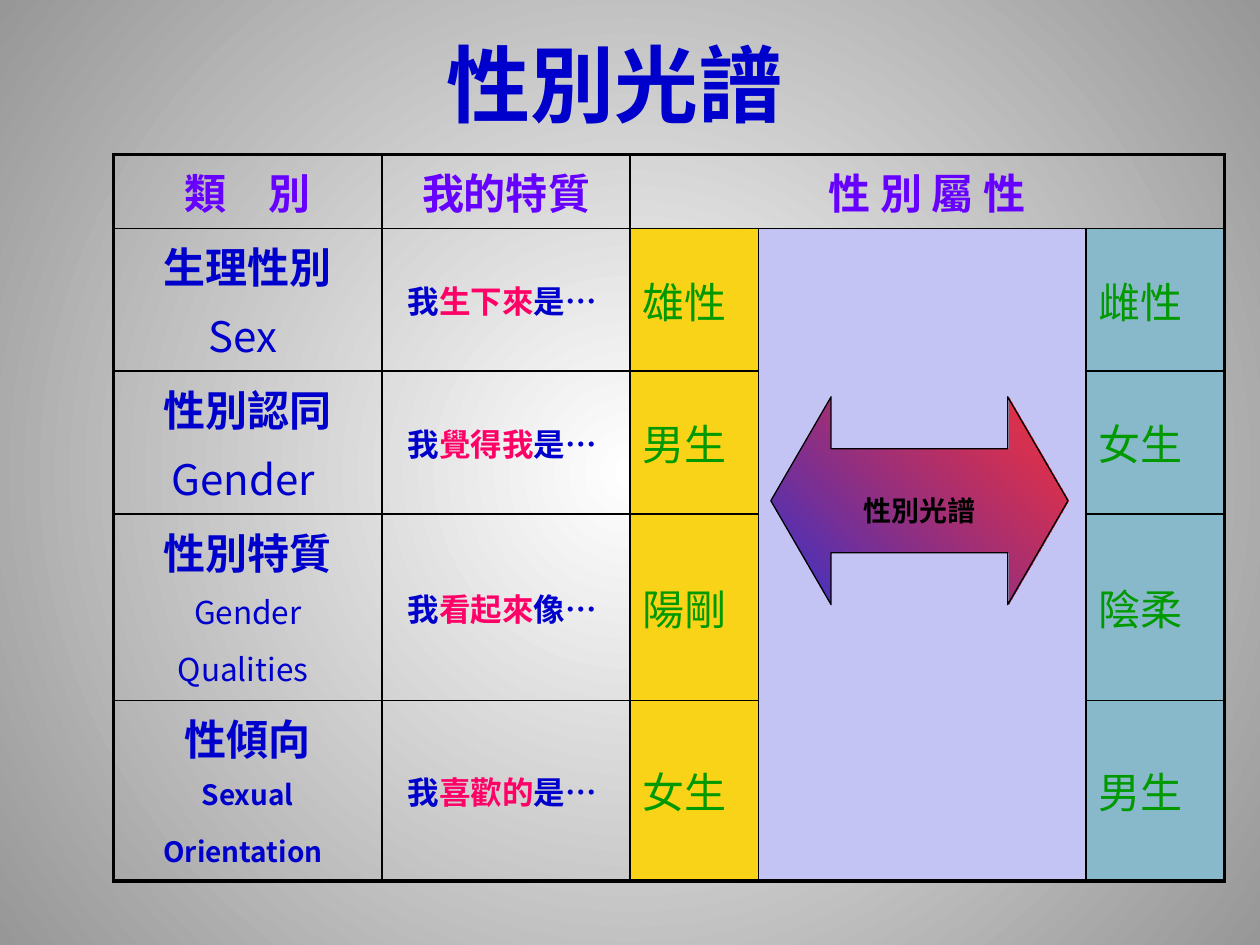
from dataclasses import dataclass

from lxml.etree import SubElement
from pptx import Presentation
from pptx.dml.color import RGBColor
from pptx.enum.shapes import MSO_SHAPE
from pptx.enum.text import MSO_ANCHOR, MSO_AUTO_SIZE, PP_ALIGN
from pptx.oxml.ns import qn
from pptx.util import Cm, Pt


@dataclass(frozen=True)
class Theme:
    title_font: str = "Karla"
    body_font: str = "Noto Sans CJK SC"
    blue: str = "0000CC"
    violet: str = "6600FF"
    pink: str = "FF0066"
    green: str = "009900"
    black: str = "000000"
    male_fill: str = "F9D317"
    spectrum_fill: str = "C4C4F4"
    female_fill: str = "88B9CA"
    backdrop: tuple = (("FFFFFF", 100), ("979797", 100))
    arrow: tuple = (("3333CC", 100), ("FF0000", 74))
    title_size: float = 48
    cell_size: float = 24
    phrase_size: float = 18
    label_size: float = 16
    outer_line: float = 2.25
    inner_line: float = 1


THEME = Theme()


@dataclass(frozen=True)
class Span:
    text: str
    color: str = THEME.blue
    size: float = THEME.cell_size
    bold: bool = True
    font: str = THEME.body_font


@dataclass(frozen=True)
class Category:
    name: str
    english: tuple[Span, ...]
    phrase: tuple[str, str, str]
    male: str
    female: str
    height: float


CATEGORIES = [
    Category("生理性別", (Span("Sex ", bold=False),),
             ("我", "生下來", "是… "), "雄性", "雌性", 2.54),
    Category("性別認同", (Span("Gender ", bold=False),),
             ("我", "覺得我", "是… "), "男生", "女生", 2.54),
    Category("性別特質",
             (Span("Gender Qualities", size=THEME.phrase_size, bold=False),
              Span(" ", bold=False)),
             ("我", "看起來", "像… "), "陽剛", "陰柔", 3.25),
    Category("性傾向",
             (Span("Sexual Orientation", size=THEME.label_size), Span(" ")),
             ("我", "喜歡的", "是… "), "女生", "男生", 3.15),
]
HEADERS = ("類　別", "我的特質", "性 別 屬 性")
COLUMN_WIDTHS = (5.41, 5, 2.59, 6.6, 2.79)
HEADER_HEIGHT = 1.3
MALE, SPECTRUM, FEMALE = 2, 3, 4


def write(frame, paragraphs: list[tuple[Span, ...]], align=PP_ALIGN.CENTER) -> None:
    """Fill a text frame; later paragraphs get a fifth of their size as space before."""
    for index, spans in enumerate(paragraphs):
        paragraph = frame.add_paragraph() if index else frame.paragraphs[0]
        paragraph.alignment = align
        if index:
            paragraph.space_before = Pt(0.2 * spans[0].size)
        for span in spans:
            run = paragraph.add_run()
            run.text = span.text
            font_format = {"name": span.font, "size": Pt(span.size), "bold": span.bold}
            for attribute, value in font_format.items():
                setattr(run.font, attribute, value)
            run.font.color.rgb = RGBColor.from_string(span.color)
            latin = run.font._element.find(qn("a:latin"))
            east_asian = latin.makeelement(qn("a:ea"), {"typeface": THEME.body_font})
            latin.addnext(east_asian)


def paint_gradient(fill, owner, stops: tuple, angle: float | None = None) -> None:
    """Paint a linear gradient, or one from the centre when no angle is given."""
    fill.gradient()
    gradient = owner.xpath(".//a:gradFill")[0]
    for child in list(gradient):
        gradient.remove(child)
    stop_list = SubElement(gradient, qn("a:gsLst"))
    for position, (color, opacity) in zip((0, 100000), stops):
        stop = SubElement(stop_list, qn("a:gs"), pos=str(position))
        rgb = SubElement(stop, qn("a:srgbClr"), val=color)
        if opacity < 100:
            SubElement(rgb, qn("a:alpha"), val=str(opacity * 1000))
    if angle is None:
        radial = SubElement(gradient, qn("a:path"), path="circle")
        SubElement(radial, qn("a:fillToRect"), dict.fromkeys("ltrb", "50000"))
    else:
        SubElement(gradient, qn("a:lin"), ang=str(int(angle * 60000)), scaled="0")


def draw_borders(cell, outer_sides: dict[str, bool]) -> None:
    properties = cell._tc.get_or_add_tcPr()
    for side, is_outer in outer_sides.items():
        width = THEME.outer_line if is_outer else THEME.inner_line
        line = SubElement(properties, qn(f"a:ln{side}"), w=str(Pt(width)))
        solid = SubElement(line, qn("a:solidFill"))
        SubElement(solid, qn("a:srgbClr"), val=THEME.black)


def style_cells(table) -> None:
    last_row, last_column = len(table.rows) - 1, len(table.columns) - 1
    fills = {MALE: THEME.male_fill, SPECTRUM: THEME.spectrum_fill,
             FEMALE: THEME.female_fill}
    for row in range(last_row + 1):
        for column in range(last_column + 1):
            cell = table.cell(row, column)
            if cell.is_spanned:
                continue
            draw_borders(cell, {
                "L": column == 0,
                "R": column + cell.span_width - 1 == last_column,
                "T": row == 0,
                "B": row + cell.span_height - 1 == last_row,
            })
            if row and column in fills:
                cell.fill.solid()
                cell.fill.fore_color.rgb = RGBColor.from_string(fills[column])
            else:
                cell.fill.background()
            if row and column:
                cell.vertical_anchor = MSO_ANCHOR.MIDDLE


def add_spectrum_table(slide) -> None:
    heights = [HEADER_HEIGHT] + [category.height for category in CATEGORIES]
    table = slide.shapes.add_table(
        len(heights), len(COLUMN_WIDTHS), Cm(2.29), Cm(3.12),
        Cm(sum(COLUMN_WIDTHS)), Cm(sum(heights))).table
    table.first_row = table.horz_banding = False
    # "No Style, No Grid"
    table._tbl.tblPr.find(qn("a:tableStyleId")).text = (
        "{2D5ABB26-0587-4C30-8999-92F81FD0307C}")
    for column, width in zip(table.columns, COLUMN_WIDTHS):
        column.width = Cm(width)
    for row, height in zip(table.rows, heights):
        row.height = Cm(height)
    table.cell(0, MALE).merge(table.cell(0, FEMALE))
    table.cell(1, SPECTRUM).merge(table.cell(len(CATEGORIES), SPECTRUM))
    style_cells(table)

    for column, header in enumerate(HEADERS):
        write(table.cell(0, column).text_frame, [(Span(header, THEME.violet),)])
    phrase_colors = (THEME.blue, THEME.pink, THEME.blue)
    for row, category in enumerate(CATEGORIES, start=1):
        write(table.cell(row, 0).text_frame, [(Span(category.name),), category.english])
        phrase = tuple(Span(part, color, THEME.phrase_size)
                       for part, color in zip(category.phrase, phrase_colors))
        write(table.cell(row, 1).text_frame, [phrase])
        for column, trait in ((MALE, category.male), (FEMALE, category.female)):
            write(table.cell(row, column).text_frame,
                  [(Span(trait, THEME.green, bold=False),)], PP_ALIGN.LEFT)


def add_spectrum_arrow(slide) -> None:
    arrow = slide.shapes.add_shape(
        MSO_SHAPE.LEFT_RIGHT_ARROW, Cm(15.54), Cm(8), Cm(5.99), Cm(4.19))
    arrow.adjustments[0], arrow.adjustments[1] = 0.5, 0.29
    arrow.shadow.inherit = False
    paint_gradient(arrow.fill, arrow._element, THEME.arrow, angle=315)
    arrow.line.color.rgb = RGBColor.from_string(THEME.black)
    arrow.line.width = Pt(0.75)
    arrow.text_frame.vertical_anchor = MSO_ANCHOR.MIDDLE
    write(arrow.text_frame, [(Span("性別光譜", THEME.black, THEME.label_size),)])
    arrow.text_frame.paragraphs[0].line_spacing = 1.6


def add_title(slide) -> None:
    title = slide.shapes.title
    placement = {"left": Cm(4.29), "top": Cm(0.71), "width": Cm(16.21), "height": Cm(1.93)}
    for attribute, value in placement.items():
        setattr(title, attribute, value)
    title.text_frame.auto_size = MSO_AUTO_SIZE.NONE
    title.text_frame.vertical_anchor = MSO_ANCHOR.MIDDLE
    write(title.text_frame,
          [(Span("性別光譜", size=THEME.title_size, font=THEME.title_font),)])


def main() -> None:
    presentation = Presentation()
    presentation.slide_width, presentation.slide_height = Cm(25.4), Cm(19.05)
    slide = presentation.slides.add_slide(presentation.slide_layouts[5])
    paint_gradient(slide.background.fill, slide._element, THEME.backdrop)
    add_title(slide)
    add_spectrum_table(slide)
    add_spectrum_arrow(slide)
    presentation.save("out.pptx")


if __name__ == "__main__":
    main()
